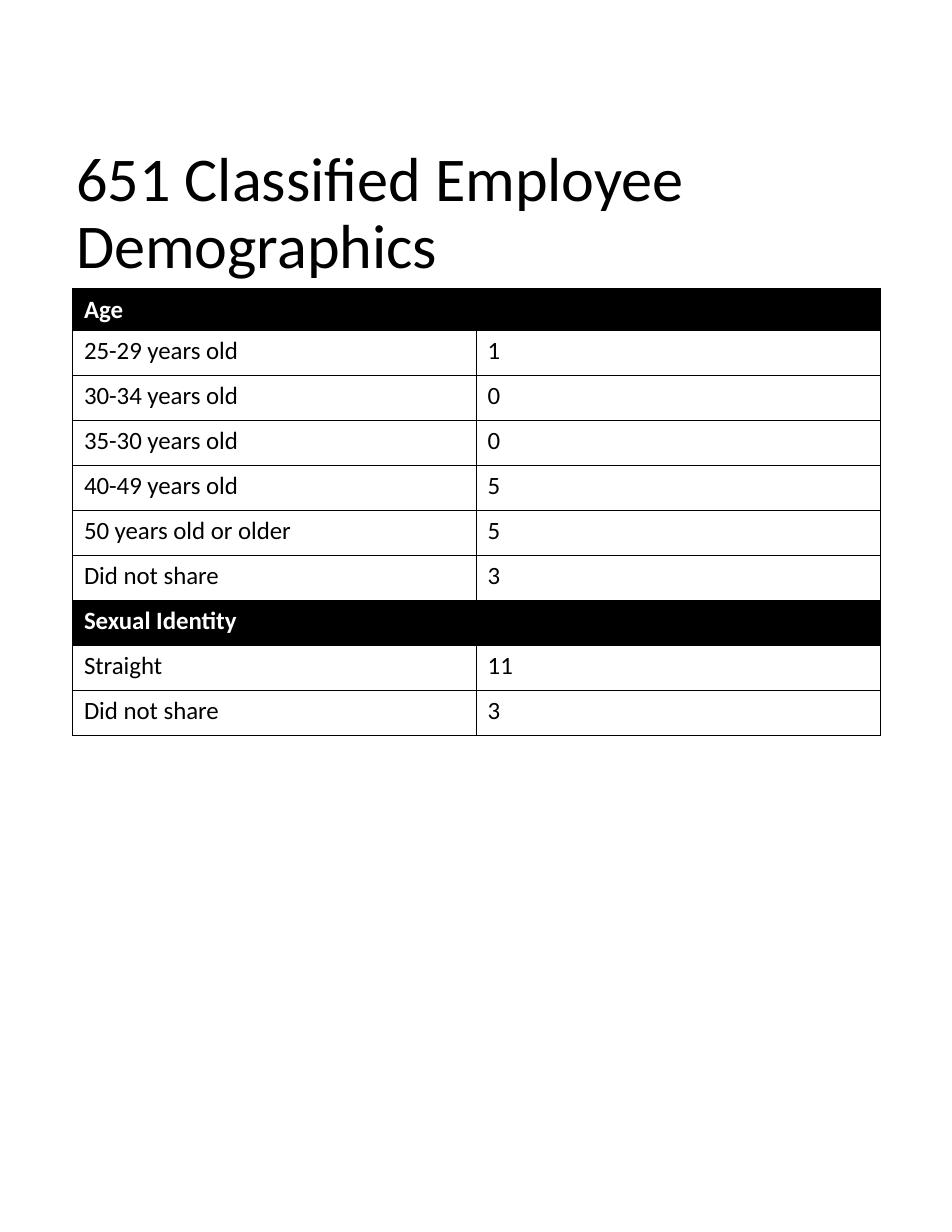
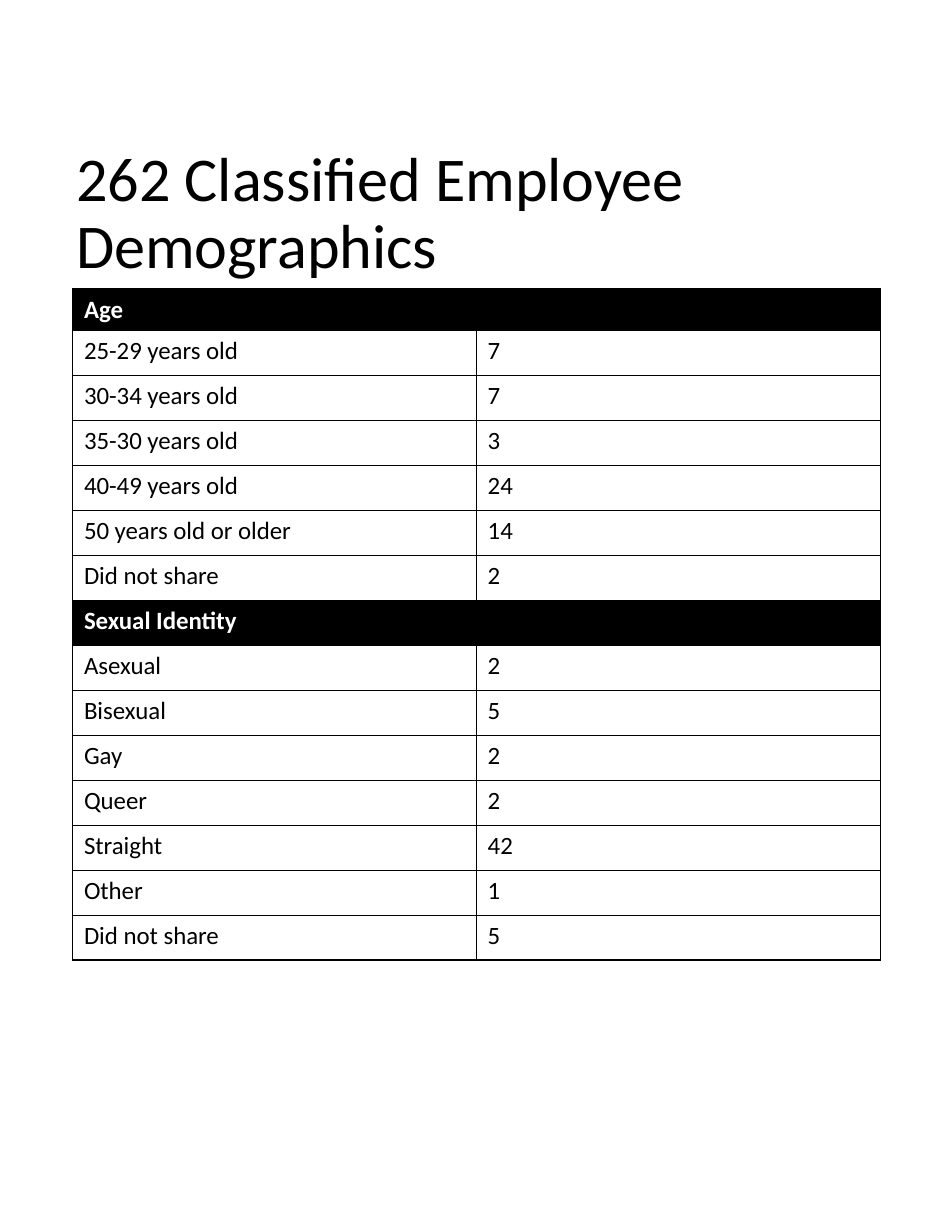
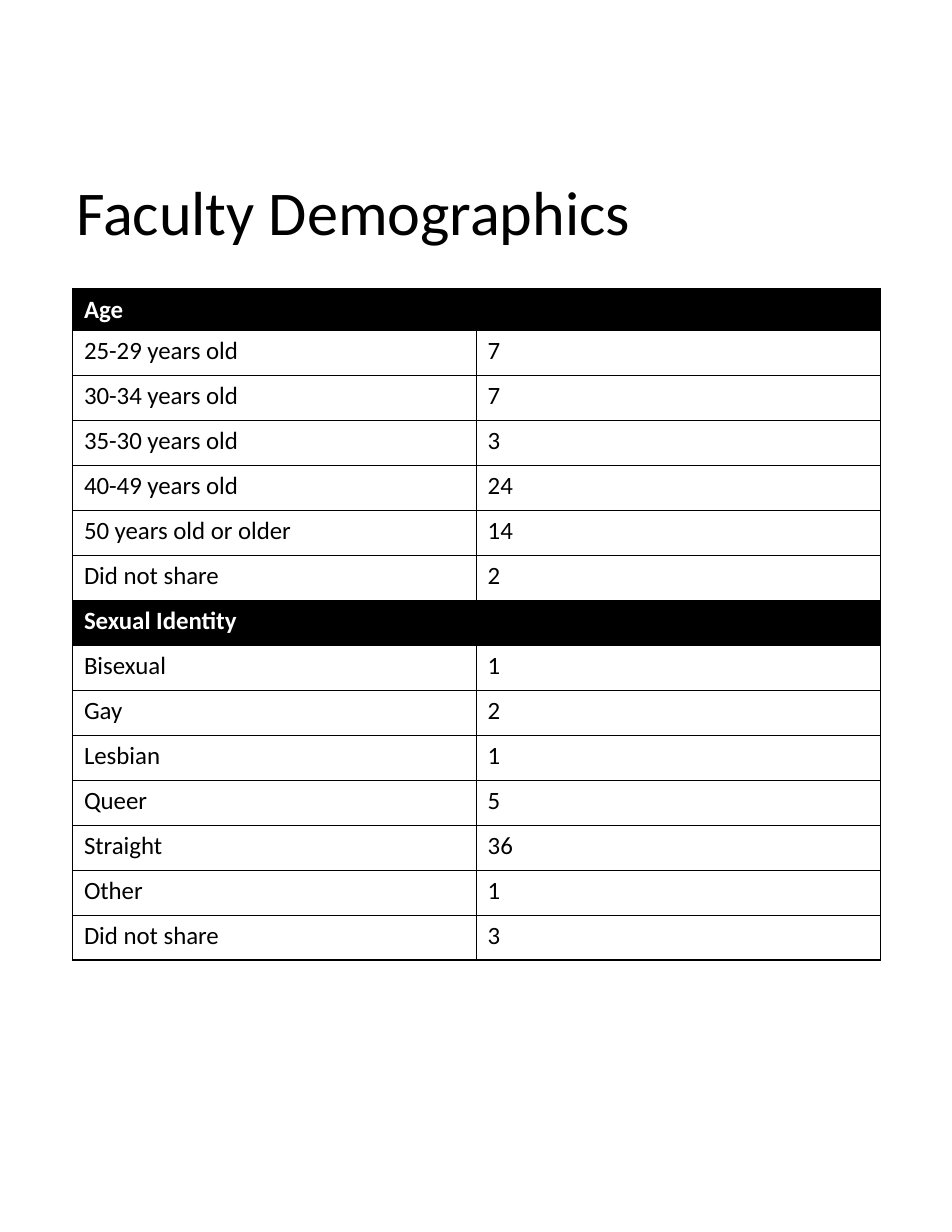
from lxml.etree import SubElement as Sub
from pptx import Presentation as Deck
from pptx.dml.color import RGBColor as Rgb
from pptx.enum.text import MSO_ANCHOR as Anchor, MSO_AUTO_SIZE as Auto, PP_ALIGN as Align
from pptx.oxml.ns import qn
from pptx.util import Pt

INK = {"black": "000000", "white": "FFFFFF"}
FONT = "Calibri"
LEFT, WIDTH = 46.8, 519.12
AGE_TOP, AGE_HEAD = 185.76, 26.6
ROW = 28.93
AGES = ("25-29 years old", "30-34 years old", "35-30 years old",
        "40-49 years old", "50 years old or older", "Did not share")
ID_TOP = AGE_TOP + AGE_HEAD + len(AGES) * ROW

PAGES = [
    ("651 Classified Employee Demographics", (1, 0, 0, 5, 5, 3),
     {"Straight": 11, "Did not share": 3}),
    ("262 Classified Employee Demographics", (7, 7, 3, 24, 14, 2),
     {"Asexual": 2, "Bisexual": 5, "Gay": 2, "Queer": 2,
      "Straight": 42, "Other": 1, "Did not share": 5}),
    ("Faculty Demographics", (7, 7, 3, 24, 14, 2),
     {"Bisexual": 1, "Gay": 2, "Lesbian": 1, "Queer": 5,
      "Straight": 36, "Other": 1, "Did not share": 3}),
]


def write(frame, words, size=16, ink="black", bold=False, space=None):
    """Put formatted text into a text frame."""
    para = frame.paragraphs[0]
    para.text = str(words)
    para.alignment = Align.LEFT
    if space:
        para.line_spacing = space
    font = para.runs[0].font
    font.name, font.size, font.bold = FONT, Pt(size), bold
    font.color.rgb = Rgb.from_string(INK[ink])


class Report:
    """Hold the deck and the current slide."""

    def __init__(self):
        """Open a letter-size deck."""
        self.deck = Deck()
        self.deck.slide_width, self.deck.slide_height = Pt(612), Pt(792)

    def page(self, title):
        """Start a slide with its title."""
        self.slide = self.deck.slides.add_slide(self.deck.slide_layouts[5])
        head = self.slide.shapes.title
        head.left, head.top, head.width, head.height = map(Pt, (41.76, 81.36, 527.76, 113.76))
        frame = head.text_frame
        frame.auto_size, frame.word_wrap = Auto.NONE, True
        frame.vertical_anchor = Anchor.MIDDLE
        write(frame, title, size=40, space=0.9)

    def style(self, cell, fill):
        """Give a cell its borders and fill."""
        props = cell._tc.get_or_add_tcPr()
        for side in ("a:lnL", "a:lnR", "a:lnT", "a:lnB"):
            line = Sub(props, qn(side), w=str(Pt(1)))
            Sub(Sub(line, qn("a:solidFill")), qn("a:srgbClr"), val=INK["black"])
        cell.fill.solid()
        cell.fill.fore_color.rgb = Rgb.from_string(INK[fill])

    def table(self, name, pairs, top, head=ROW):
        """Draw a count table under a black heading row."""
        pairs = list(pairs)
        high = head + ROW * len(pairs)
        grid = self.slide.shapes.add_table(
            len(pairs) + 1, 2, Pt(LEFT), Pt(top), Pt(WIDTH), Pt(high)).table
        grid.first_row = grid.horz_banding = False
        for num, row in enumerate(grid.rows):
            row.height = Pt(ROW if num else head)
            for cell in row.cells:
                self.style(cell, "white" if num else "black")
        grid.cell(0, 0).merge(grid.cell(0, 1))
        write(grid.cell(0, 0).text_frame, name, ink="white", bold=True)
        for num, pair in enumerate(pairs, 1):
            for col, words in enumerate(pair):
                write(grid.cell(num, col).text_frame, words)


def main():
    """Build every slide and save the deck."""
    report = Report()
    for title, counts, groups in PAGES:
        report.page(title)
        report.table("Age", zip(AGES, counts), AGE_TOP, AGE_HEAD)
        report.table("Sexual Identity", groups.items(), ID_TOP)
    report.deck.save("out.pptx")


if __name__ == "__main__":
    main()
